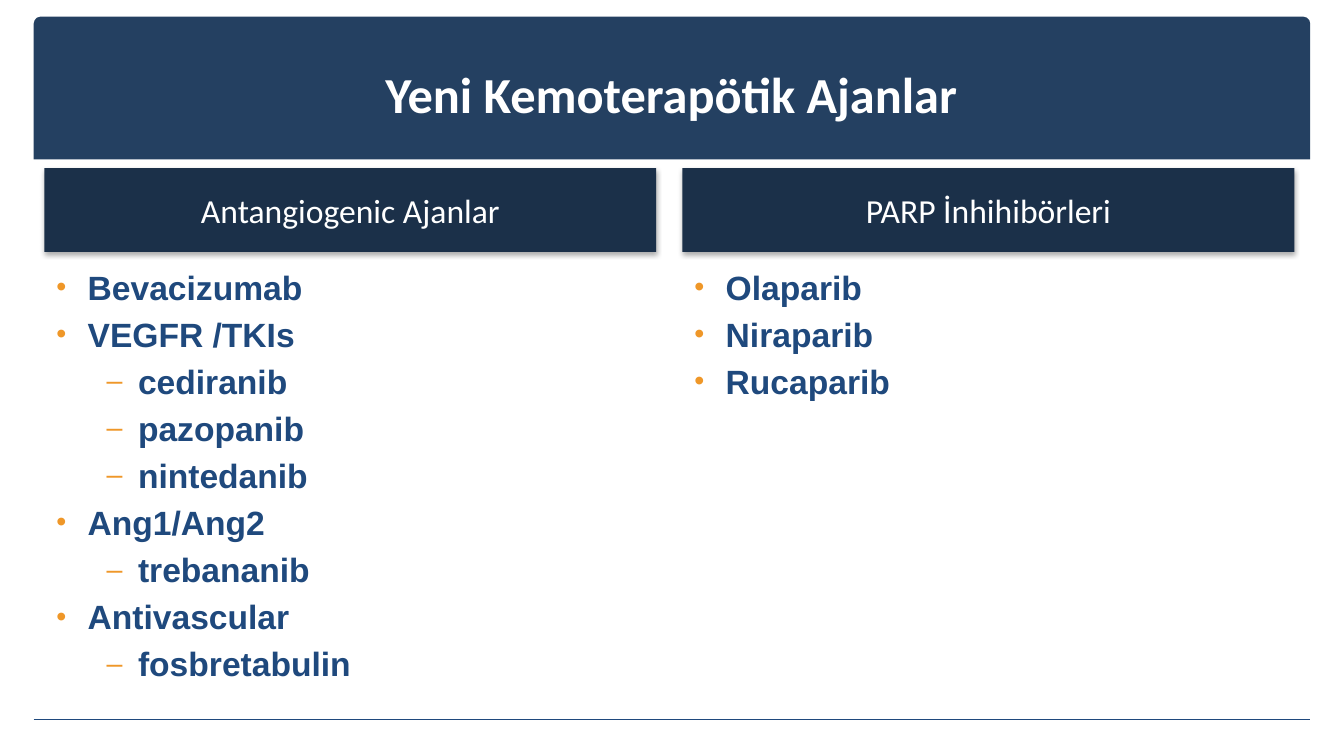
from dataclasses import dataclass
from lxml.etree import SubElement as Sub
from pptx import Presentation
from pptx.dml.color import RGBColor as RGB
from pptx.enum.shapes import MSO_CONNECTOR as Link, MSO_SHAPE as Kind
from pptx.enum.text import MSO_ANCHOR as Anchor, PP_ALIGN as Align
from pptx.oxml.ns import qn
from pptx.util import Cm, Pt

# Content: each column has a heading and (level, text) items
TITLE = "Yeni Kemoterapötik Ajanlar"
COLUMNS = [
    ("Antangiogenic Ajanlar", [
        (0, "Bevacizumab"),
        (0, "VEGFR /TKIs"),
        (1, "cediranib"),
        (1, "pazopanib"),
        (1, "nintedanib"),
        (0, "Ang1/Ang2"),
        (1, "trebananib"),
        (0, "Antivascular"),
        (1, "fosbretabulin"),
    ]),
    ("PARP İnhihibörleri", [
        (0, "Olaparib"),
        (0, "Niraparib"),
        (0, "Rucaparib"),
    ]),
]


@dataclass(frozen=True)
class Theme:
    banner: str = "244061"
    head: str = "1B3049"
    ink: str = "1F497D"
    mark: str = "EF9728"
    white: str = "FFFFFF"
    shade: str = "000000"
    title_pt: int = 36
    text_pt: int = 24
    head_font: str = "Calibri"
    list_font: str = "Arial"


theme = Theme()

# Layout in centimetres
WIDE, HIGH = 33.87, 19.05
EDGE, RULE_Y = 0.85, 18.13
LEFT, STEP, COL_W = 1.12, 16.08, 15.42
HEAD_Y, HEAD_H = 4.24, 2.11
LIST_Y, LIST_H = 6.6, 10.29
MARKS = [("•", 0.84), ("–", 2.11)]
HANG = 0.79


def box(*sizes):
    return [Cm(size) for size in sizes]


def style(par, name, size, color, bold=False):
    font = par.font
    font.name, font.size, font.bold = name, Pt(size), bold
    font.color.rgb = RGB.from_string(color)


def node(parent, tag, **attrs):
    return Sub(parent, qn(tag), {key: str(val) for key, val in attrs.items()})


def gap(par):
    """Space before of 20 percent of the line."""
    props = par._p.get_or_add_pPr()
    node(node(props, "a:spcBef"), "a:spcPct", val=20000)
    return props


def bullet(par, level):
    mark, indent = MARKS[level]
    par.level = level
    props = gap(par)
    props.set("marL", str(Cm(indent)))
    props.set("indent", str(-Cm(HANG)))
    node(node(props, "a:buClr"), "a:srgbClr", val=theme.mark)
    node(props, "a:buSzPct", val=85000)
    node(props, "a:buFont", typeface=theme.list_font)
    node(props, "a:buChar", char=mark)


def block(kind, place, color):
    shape = slide.shapes.add_shape(kind, *place)
    shape.shadow.inherit = False
    shape.fill.solid()
    shape.fill.fore_color.rgb = RGB.from_string(color)
    shape.line.fill.background()
    return shape


def shade(shape):
    effects = shape._element.spPr.find(qn("a:effectLst"))
    outer = node(effects, "a:outerShdw", blurRad=Pt(3.5), dist=Pt(2.2),
                 dir=5400000, rotWithShape=0)
    color = node(outer, "a:srgbClr", val=theme.shade)
    node(color, "a:alpha", val=32000)


deck = Presentation()
deck.slide_width, deck.slide_height = box(WIDE, HIGH)
slide = deck.slides.add_slide(deck.slide_layouts[5])

# Banner, behind the title
banner = block(Kind.ROUND_2_SAME_RECTANGLE,
               box(EDGE, 0.42, WIDE - 2 * EDGE, 3.6), theme.banner)
banner.adjustments[0], banner.adjustments[1] = 0.049, 0
slide.shapes._spTree.insert(2, banner._element)

# Title
title = slide.shapes.title
title.left, title.top, title.width, title.height = box(LEFT, 0.76, 31.6, 3.18)
title.text_frame.text = TITLE
title.text_frame.vertical_anchor = Anchor.MIDDLE
par = title.text_frame.paragraphs[0]
par.alignment = Align.CENTER
style(par, theme.head_font, theme.title_pt, theme.white, True)

# Bottom rule
rule = slide.shapes.add_connector(
    Link.STRAIGHT, *box(EDGE, RULE_Y, WIDE - EDGE, RULE_Y))
rule.line.color.rgb = RGB.from_string(theme.ink)
rule.line.width = Pt(1)
node(rule._element.spPr, "a:effectLst")

# Columns: heading bar above a bulleted list
for col, (label, items) in enumerate(COLUMNS):
    x = LEFT + col * STEP
    head = block(Kind.RECTANGLE, box(x, HEAD_Y, COL_W, HEAD_H), theme.head)
    shade(head)
    head.text_frame.text = label
    head.text_frame.vertical_anchor = Anchor.MIDDLE
    par = head.text_frame.paragraphs[0]
    par.alignment = Align.CENTER
    gap(par)
    style(par, theme.head_font, theme.text_pt, theme.white)

    frame = slide.shapes.add_textbox(*box(x, LIST_Y, COL_W, LIST_H)).text_frame
    frame.word_wrap = True
    frame.text = "\n".join(text for _, text in items)
    for par, (level, _) in zip(frame.paragraphs, items):
        bullet(par, level)
        style(par, theme.list_font, theme.text_pt, theme.ink, True)

deck.save("out.pptx")
